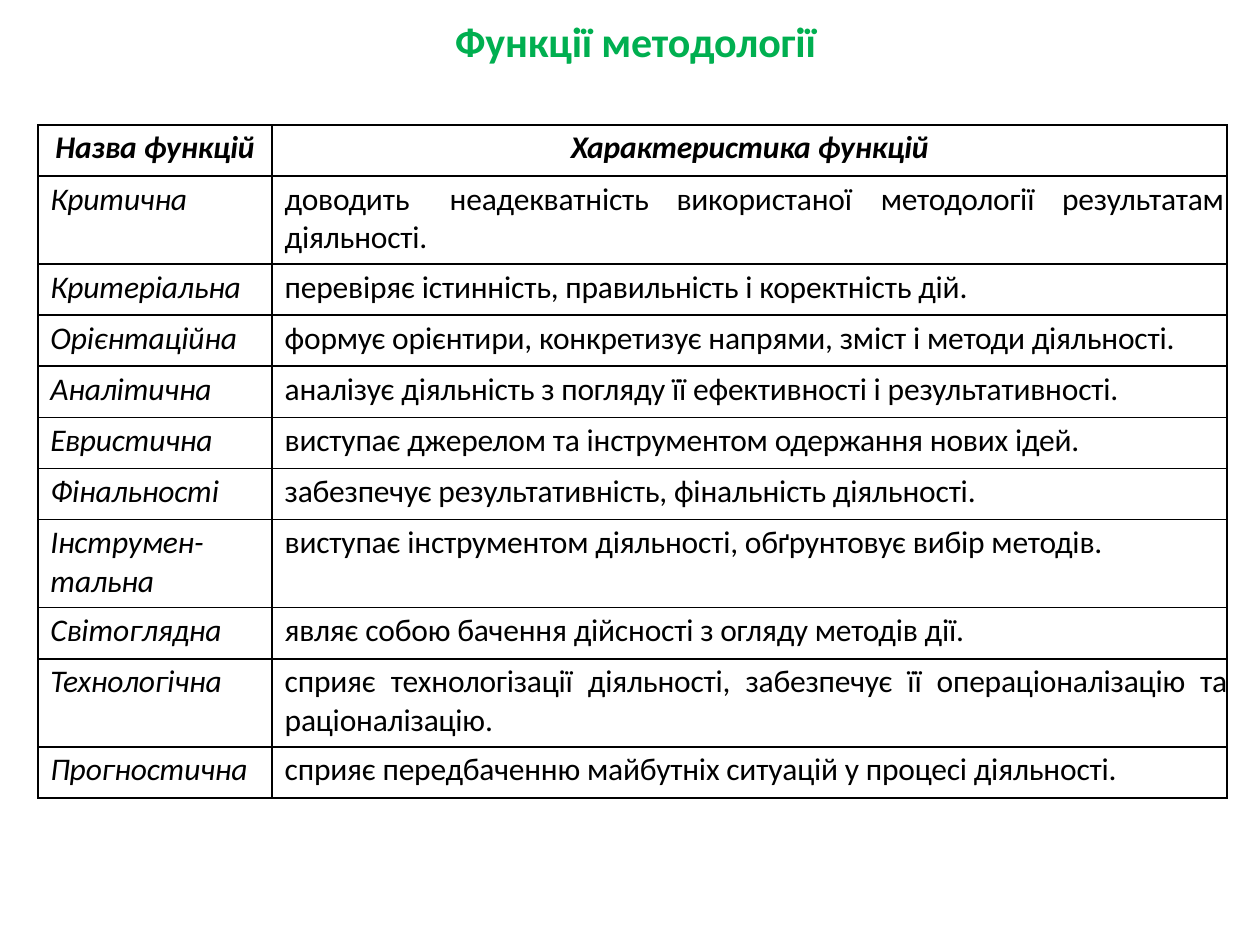
from lxml import etree
from pptx import Presentation
from pptx.dml.color import RGBColor
from pptx.enum import text as t
from pptx.oxml import ns
from pptx.util import Pt

GREEN, BLACK = "00AF50", "000000"
HEADER = ("Назва функцій", "Характеристика функцій")
FUNCTIONS = [
    ("Критична", "доводить\tнеадекватність\tвикористаної\tметодології\tрезультатам\nдіяльності."),
    ("Критеріальна", "перевіряє істинність, правильність і коректність дій."),
    ("Орієнтаційна", "формує орієнтири, конкретизує напрями, зміст і методи діяльності."),
    ("Аналітична", "аналізує діяльність з погляду її ефективності і результативності."),
    ("Евристична", "виступає джерелом та інструментом одержання нових ідей."),
    ("Фінальності", "забезпечує результативність, фінальність діяльності."),
    ("Інструмен-\nтальна", "виступає інструментом діяльності, обґрунтовує вибір методів."),
    ("Світоглядна", "являє собою бачення дійсності з огляду методів дії."),
    ("Технологічна", "сприяє технологізації діяльності, забезпечує її операціоналізацію та раціоналізацію."),
    ("Прогностична", "сприяє передбаченню майбутніх ситуацій у процесі діяльності."),
]
TALL_ROWS = {"Критична", "Інструмен-\nтальна", "Технологічна"}
JUSTIFIED = {"Технологічна"}
TAB_STOPS = (94.3, 223.9, 340.6, 444.2)


def color(value):
    return RGBColor.from_string(value)


def add_tabs(para, stops):
    tabs = etree.SubElement(para._p.get_or_add_pPr(), ns.qn("a:tabLst"))
    for stop in stops:
        etree.SubElement(tabs, ns.qn("a:tab"), pos=str(Pt(stop)), algn="l")


def write(frame, content, size=18, hue=BLACK, bold=False, italic=False,
          align=t.PP_ALIGN.LEFT, margins=(0, 0, 0, 0)):
    """Fill a text frame, one paragraph for each line of content."""
    frame.word_wrap = True
    frame.margin_left, frame.margin_top, frame.margin_right, frame.margin_bottom = map(Pt, margins)
    for index, line in enumerate(content.split("\n")):
        para = frame.add_paragraph() if index else frame.paragraphs[0]
        para.alignment = align
        para.space_before = Pt(0)
        if "\t" in line:
            add_tabs(para, TAB_STOPS)
        span = para.add_run()
        span.text = line
        span._r.get_or_add_rPr().set("spc", "-10")
        font = span.font
        font.name, font.size, font.bold, font.italic = "Calibri", Pt(size), bold, italic
        font.color.rgb = color(hue)


def border(cell, hue=BLACK, width=1):
    properties = cell._tc.get_or_add_tcPr()
    for side in ("lnL", "lnR", "lnT", "lnB"):
        line = etree.SubElement(properties, ns.qn("a:" + side), w=str(Pt(width)))
        fill = etree.SubElement(line, ns.qn("a:solidFill"))
        etree.SubElement(fill, ns.qn("a:srgbClr"), val=hue)


def fill_cell(cell, content, left=7.2, **style):
    cell.margin_left, cell.margin_top = Pt(left), Pt(2.4)
    cell.margin_right = cell.margin_bottom = 0
    cell.vertical_anchor = t.MSO_ANCHOR.TOP
    border(cell)
    cell.fill.background()
    write(cell.text_frame, content, margins=(left, 2.4, 0, 0), **style)


def place_title(page, left, top, width, height):
    title = page.shapes.title
    title.left, title.top, title.width, title.height = map(Pt, (left, top, width, height))
    title.text_frame.vertical_anchor = t.MSO_ANCHOR.TOP
    write(title.text_frame, "Функції методології", size=24, hue=GREEN, bold=True,
          margins=(0.9, 1.8, 0, 0))


def place_table(page, left, top, width, name_width=133.9, low=29.25, tall=50.3):
    heights = [low] + [tall if name in TALL_ROWS else low for name, _ in FUNCTIONS]
    table = page.shapes.add_table(len(heights), 2, Pt(left), Pt(top), Pt(width),
                                  Pt(sum(heights))).table
    table.horz_banding = table.first_row = False
    table.columns[0].width = Pt(name_width)
    table.columns[1].width = Pt(width - name_width)
    for row, height in zip(table.rows, heights):
        row.height = Pt(height)
    for column, heading in enumerate(HEADER):
        fill_cell(table.cell(0, column), heading, left=0, bold=True, italic=True,
                  align=t.PP_ALIGN.CENTER)
    for index, (name, description) in enumerate(FUNCTIONS, start=1):
        align = t.PP_ALIGN.JUSTIFY if name in JUSTIFIED else t.PP_ALIGN.LEFT
        fill_cell(table.cell(index, 0), name, italic=True)
        fill_cell(table.cell(index, 1), description, align=align)


def main():
    deck = Presentation()
    deck.slide_width, deck.slide_height = Pt(720), Pt(540)
    page = deck.slides.add_slide(deck.slide_layouts[5])
    place_title(page, 259.2, 7.2, 209.5, 31)
    place_table(page, 21.6, 71.3, 679.7)
    deck.save("out.pptx")


if __name__ == "__main__":
    main()
